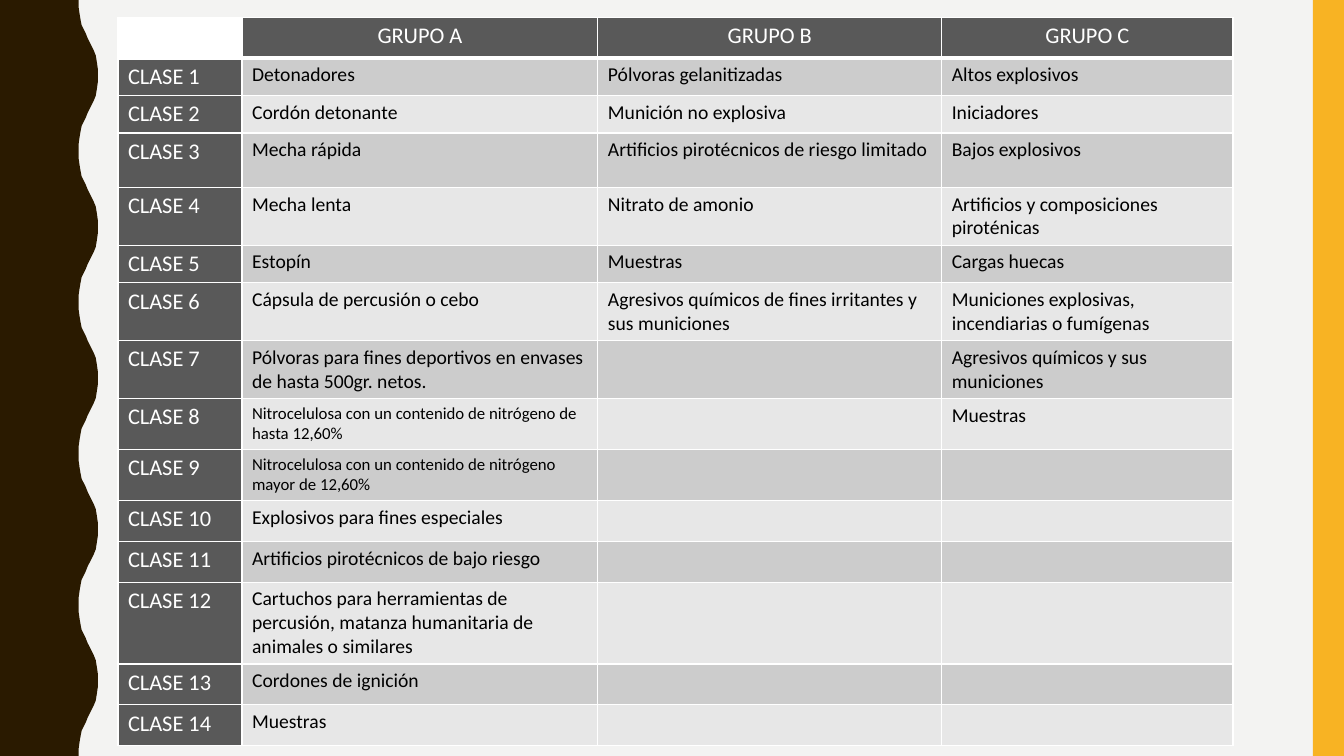
from dataclasses import dataclass

from pptx import Presentation
from pptx import util as u
from pptx.dml.color import RGBColor
from pptx.enum import shapes, text
from pptx.oxml import parse_xml
from pptx.oxml.ns import nsdecls

PX = 9144  # 100 px to the inch
SLIDE_W, SLIDE_H = 1333, 750


@dataclass(frozen=True)
class Theme:
    font: str = "Calibri"
    background: str = "F3F3F2"
    wave: str = "2A1A00"
    bar: str = "F8B323"
    heading: str = "595959"
    bands: tuple = ("CCCCCC", "E7E7E7")
    white: str = "FFFFFF"
    ink: str = "000000"
    label_size: int = 16
    body_size: int = 14
    small_size: int = 12
    rule: int = 1
    heading_rule: int = 3


THEME = Theme()

# Edge of the wave from trough to crest
HALF_WAVE = [(78, 0), (78, 7), (79, 14), (80, 20), (81, 25), (83, 29), (85, 33), (87, 38),
             (89, 42), (91, 46), (93, 50), (95, 55), (96, 61), (97, 68), (97, 75)]
WAVES = 5

COLUMN_WIDTHS = [123, 353, 341, 289]
ROW_HEIGHTS = [38, 35, 35, 54, 54, 35, 54, 54, 48, 48, 38, 38, 77, 38, 38]
SMALL_CLASSES = (8, 9)
GROUPS = {
    "GRUPO A": [
        "Detonadores", "Cordón detonante", "Mecha rápida", "Mecha lenta", "Estopín",
        "Cápsula de percusión o cebo",
        "Pólvoras para fines deportivos en envases de hasta 500gr. netos.",
        "Nitrocelulosa con un contenido de nitrógeno de hasta 12,60%",
        "Nitrocelulosa con un contenido de nitrógeno mayor de 12,60%",
        "Explosivos para fines especiales", "Artificios pirotécnicos de bajo riesgo",
        "Cartuchos para herramientas de percusión, matanza humanitaria de animales o similares",
        "Cordones de ignición", "Muestras",
    ],
    "GRUPO B": [
        "Pólvoras gelanitizadas", "Munición no explosiva",
        "Artificios pirotécnicos de riesgo limitado", "Nitrato de amonio", "Muestras",
        "Agresivos químicos de fines irritantes y sus municiones",
    ],
    "GRUPO C": [
        "Altos explosivos", "Iniciadores", "Bajos explosivos",
        "Artificios y composiciones piroténicas", "Cargas huecas",
        "Municiones explosivas, incendiarias o fumígenas",
        "Agresivos químicos y sus municiones", "Muestras",
    ],
}


def px(*lengths):
    return [u.Emu(length * PX) for length in lengths]


def paint(shape, colour):
    shape.shadow.inherit = False
    shape.fill.solid()
    shape.fill.fore_color.rgb = RGBColor.from_string(colour)
    shape.line.fill.background()


def add_wave(slide, left, top, height):
    period = 2 * HALF_WAVE[-1][1]
    crest_to_trough = [(x, period - y) for x, y in reversed(HALF_WAVE[:-1])]
    edge = [(left + x, top + y + wave * period)
            for wave in range(WAVES) for x, y in HALF_WAVE + crest_to_trough[:-1]]
    edge += [(left + HALF_WAVE[0][0], top + height), (left, top + height)]
    outline = slide.shapes.build_freeform(left, top, scale=PX)
    outline.add_line_segments(edge, close=True)
    paint(outline.convert_to_shape(), THEME.wave)


def add_bar(slide, left, top, width, height):
    bar = slide.shapes.add_shape(shapes.MSO_SHAPE.RECTANGLE, *px(left, top, width, height))
    paint(bar, THEME.bar)


def style_cell(cell, fill, bottom_rule):
    """Borders go in before the fill, as the schema orders them."""
    properties = cell._tc.get_or_add_tcPr()
    for side in "LRTB":
        width = u.Pt(bottom_rule if side == "B" else THEME.rule)
        properties.append(parse_xml(
            f'<a:ln{side} {nsdecls("a")} w="{width}"><a:solidFill>'
            f'<a:srgbClr val="{THEME.white}"/></a:solidFill></a:ln{side}>'))
    cell.fill.solid()
    cell.fill.fore_color.rgb = RGBColor.from_string(fill)


def write_cell(cell, words, size, colour, align=None):
    cell.text = words
    paragraph = cell.text_frame.paragraphs[0]
    paragraph.alignment = align
    font = paragraph.font
    font.name, font.size, font.bold = THEME.font, u.Pt(size), False
    font.color.rgb = RGBColor.from_string(colour)


def table_rows():
    yield ["", *GROUPS]
    for index in range(len(ROW_HEIGHTS) - 1):
        entries = [group[index] if index < len(group) else "" for group in GROUPS.values()]
        yield [f"CLASE {index + 1}", *entries]


def add_class_table(slide, left, top, width, height):
    frame = slide.shapes.add_table(len(ROW_HEIGHTS), len(COLUMN_WIDTHS),
                                   *px(left, top, width, height))
    table = frame.table
    table.first_row = table.horz_banding = False
    for column, column_width in zip(table.columns, px(*COLUMN_WIDTHS)):
        column.width = column_width
    for row, row_height in zip(table.rows, px(*ROW_HEIGHTS)):
        row.height = row_height
    frame.height = px(height)[0]

    for r, row in enumerate(table_rows()):
        for c, words in enumerate(row):
            is_label = r == 0 or c == 0
            fill = THEME.heading if is_label else THEME.bands[(r - 1) % 2]
            if r == c == 0:
                fill = THEME.white
            cell = table.cell(r, c)
            style_cell(cell, fill, THEME.rule if r else THEME.heading_rule)
            if not words:
                continue
            if is_label:
                align = None if r else text.PP_ALIGN.CENTER
                write_cell(cell, words, THEME.label_size, THEME.white, align)
            else:
                is_small = c == 1 and r in SMALL_CLASSES
                size = THEME.small_size if is_small else THEME.body_size
                write_cell(cell, words, size, THEME.ink)


def add_classification_slide(deck):
    slide = deck.slides.add_slide(deck.slide_layouts[6])
    slide.background.fill.solid()
    slide.background.fill.fore_color.rgb = RGBColor.from_string(THEME.background)
    add_wave(slide, 0, 0, SLIDE_H)
    add_bar(slide, SLIDE_W - 31, 0, 31, SLIDE_H)
    add_class_table(slide, 117, 17, sum(COLUMN_WIDTHS), 717)


def main():
    deck = Presentation()
    deck.slide_width, deck.slide_height = px(SLIDE_W, SLIDE_H)
    add_classification_slide(deck)
    deck.save("out.pptx")


if __name__ == "__main__":
    main()
